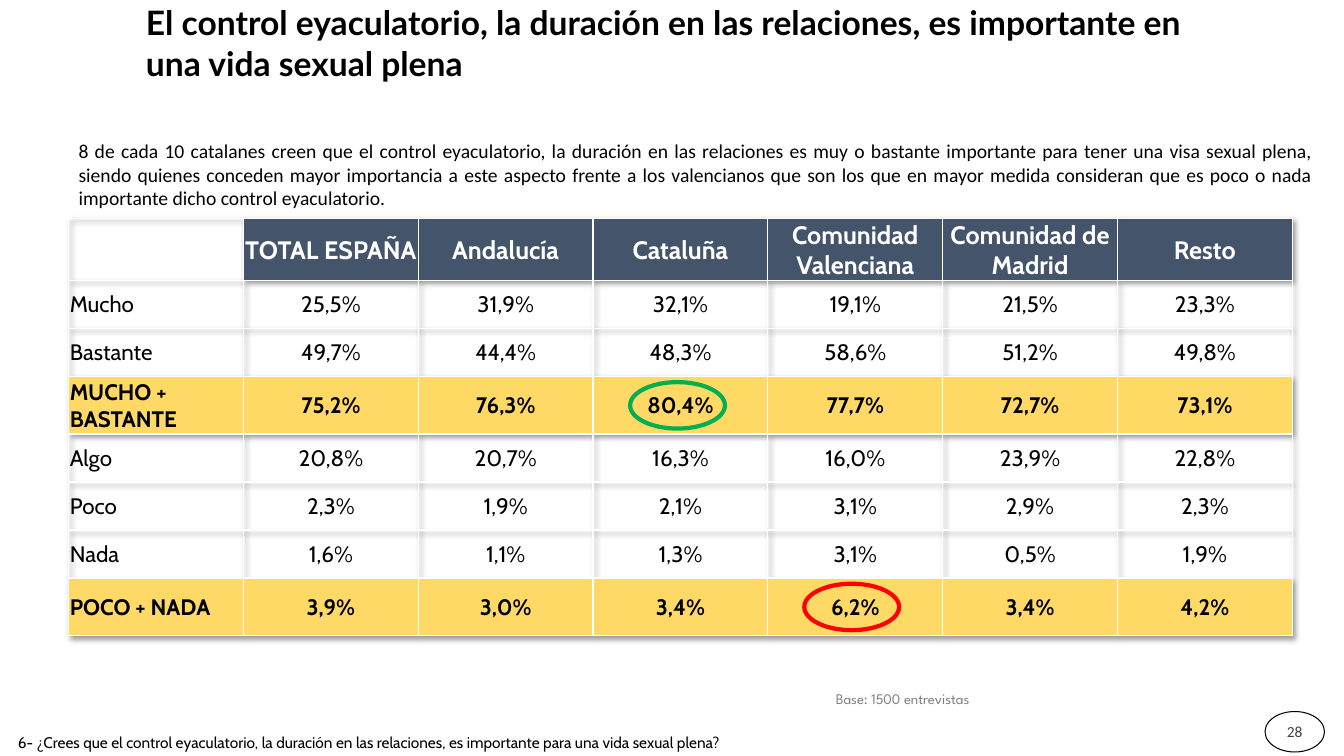
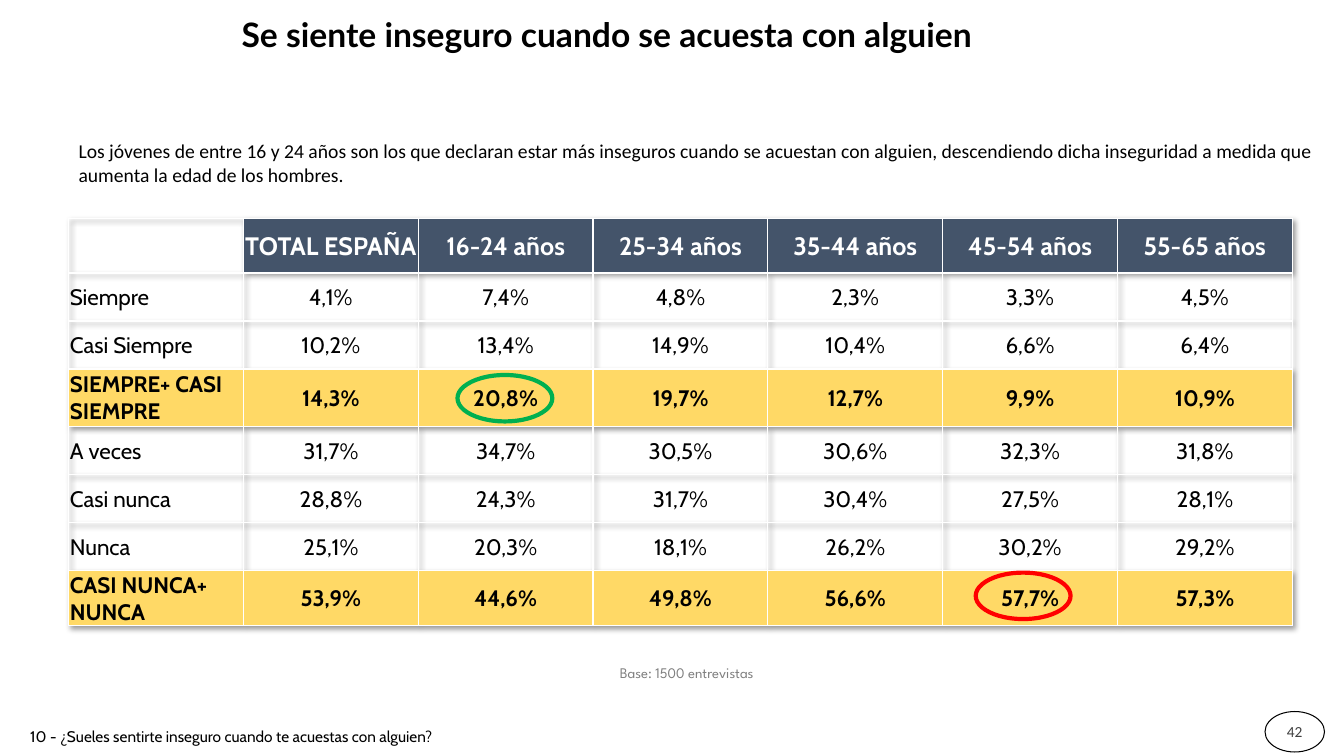
from pptx import Presentation, util as u
from pptx.dml.color import RGBColor
from pptx.enum import shapes, text
from pptx.oxml import parse_xml
from pptx.oxml.ns import nsdecls, qn
from lxml import etree

COLORS = {"black": "000000", "white": "FFFFFF", "navy": "44546A", "gold": "FFD966",
          "gray": "808080", "dark": "404040", "green": "00B050", "red": "FF0000"}
LEFT, CENTER, JUSTIFY = text.PP_ALIGN.LEFT, text.PP_ALIGN.CENTER, text.PP_ALIGN.JUSTIFY
STYLES = {
    "title": ("Lato", 24, "black", True),
    "lead": ("Calibri", 14, "black", False),
    "base": ("League Spartan", 10.5, "gray", False),
    "question": ("Cabin", 11, "black", False),
    "number": ("Calibri", 11, "dark", False),
    "header": ("Cabin", 18, "white", True),
    "body": ("Cabin", 16, "black", False),
    "subtotal": ("Cabin", 16, "black", True),
}
SUBTOTAL_ROWS = (3, 7)
COLUMN_WIDTH = 4.405
TABLE_SHADOW = (
    f'<a:effectLst {nsdecls("a")}><a:outerShdw blurRad="50800" dist="38100" dir="2700000" '
    'algn="tl" rotWithShape="0"><a:prstClr val="black"><a:alpha val="40000"/></a:prstClr>'
    '</a:outerShdw></a:effectLst>')

SLIDES = [
    {
        "number": "28",
        "title": "El control eyaculatorio, la duración en las relaciones, es importante en una vida sexual plena",
        "title_at": (3.43, 0.03, 27.76, 2.08), "title_align": LEFT,
        "lead": "8 de cada 10 catalanes creen que el control eyaculatorio, la duración en las relaciones "
                "es muy o bastante importante para tener una visa sexual plena, siendo quienes conceden "
                "mayor importancia a este aspecto frente a los valencianos que son los que en mayor medida "
                "consideran que es poco o nada importante dicho control eyaculatorio.",
        "lead_height": 2.06,
        "base_at": (20.02, 17.27, 5.46, 0.71),
        "question": "6- ¿Crees que el control eyaculatorio, la duración en las relaciones, "
                    "es importante para una vida sexual plena?",
        "question_at": (0.2, 18.34, 22.99, 0.74),
        "last_row": 1.45,
        "rows": [
            ["", "TOTAL ESPAÑA", "Andalucía", "Cataluña", "Comunidad Valenciana", "Comunidad de Madrid", "Resto"],
            ["Mucho", "25,5%", "31,9%", "32,1%", "19,1%", "21,5%", "23,3%"],
            ["Bastante", "49,7%", "44,4%", "48,3%", "58,6%", "51,2%", "49,8%"],
            ["MUCHO + BASTANTE", "75,2%", "76,3%", "80,4%", "77,7%", "72,7%", "73,1%"],
            ["Algo", "20,8%", "20,7%", "16,3%", "16,0%", "23,9%", "22,8%"],
            ["Poco", "2,3%", "1,9%", "2,1%", "3,1%", "2,9%", "2,3%"],
            ["Nada", "1,6%", "1,1%", "1,3%", "3,1%", "0,5%", "1,9%"],
            ["POCO + NADA", "3,9%", "3,0%", "3,4%", "6,2%", "3,4%", "4,2%"],
        ],
        "rings": [("green", 15.88, 9.63), ("red", 20.27, 14.71)],
    },
    {
        "number": "42",
        "title": "Se siente inseguro cuando se acuesta con alguien",
        "title_at": (4.14, 0.08, 22.3, 1.55), "title_align": CENTER,
        "lead": "Los jóvenes de entre 16 y 24 años son los que declaran estar más inseguros cuando se "
                "acuestan con alguien, descendiendo dicha inseguridad a medida que aumenta la edad de los hombres.",
        "lead_height": 1.45,
        "base_at": (14.58, 16.61, 5.46, 0.71),
        "question": "10 - ¿Sueles sentirte inseguro cuando te acuestas con alguien?",
        "question_at": (0.51, 18.19, 18.59, 0.74),
        "last_row": 1.3,
        "rows": [
            ["", "TOTAL ESPAÑA", "16-24 años", "25-34 años", "35-44 años", "45-54 años", "55-65 años"],
            ["Siempre", "4,1%", "7,4%", "4,8%", "2,3%", "3,3%", "4,5%"],
            ["Casi Siempre", "10,2%", "13,4%", "14,9%", "10,4%", "6,6%", "6,4%"],
            ["SIEMPRE+ CASI SIEMPRE", "14,3%", "20,8%", "19,7%", "12,7%", "9,9%", "10,9%"],
            ["A veces", "31,7%", "34,7%", "30,5%", "30,6%", "32,3%", "31,8%"],
            ["Casi nunca", "28,8%", "24,3%", "31,7%", "30,4%", "27,5%", "28,1%"],
            ["Nunca", "25,1%", "20,3%", "18,1%", "26,2%", "30,2%", "29,2%"],
            ["CASI NUNCA+ NUNCA", "53,9%", "44,6%", "49,8%", "56,6%", "57,7%", "57,3%"],
        ],
        "rings": [("green", 11.53, 9.45), ("red", 24.59, 14.43)],
    },
]


def write(frame, words, style, align):
    name, size, color, bold = STYLES[style]
    para = frame.paragraphs[0]
    para.alignment = align
    span = para.add_run()
    span.text = words
    span.font.name = name
    span.font.size = u.Pt(size)
    span.font.bold = bold
    span.font.color.rgb = RGBColor.from_string(COLORS[color])


def add_ellipse(page, at, color, weight):
    ellipse = page.shapes.add_shape(shapes.MSO_SHAPE.OVAL, *map(u.Cm, at))
    ellipse.shadow.inherit = False
    ellipse.fill.background()
    ellipse.line.color.rgb = RGBColor.from_string(COLORS[color])
    ellipse.line.width = u.Pt(weight)
    return ellipse


deck = Presentation()
deck.slide_width, deck.slide_height = u.Cm(33.87), u.Cm(19.05)

for content in SLIDES:
    page = deck.slides.add_slide(deck.slide_layouts[6])

    badge = add_ellipse(page, (31.88, 17.93, 1.5, 1.02), "black", 0.75)
    badge.fill.solid()
    badge.fill.fore_color.rgb = RGBColor.from_string(COLORS["white"])
    tint = badge.fill._xPr.find(qn("a:solidFill"))[0]
    etree.SubElement(tint, qn("a:alpha"), val="70000")
    badge.text_frame.margin_left = badge.text_frame.margin_right = u.Cm(0.05)
    badge.text_frame.vertical_anchor = text.MSO_ANCHOR.MIDDLE
    write(badge.text_frame, content["number"], "number", CENTER)

    for style, words, at, align in (
        ("base", "Base: 1500 entrevistas", content["base_at"], CENTER),
        ("lead", content["lead"], (1.73, 3.38, 31.62, content["lead_height"]), JUSTIFY),
        ("title", content["title"], content["title_at"], content["title_align"]),
        ("question", content["question"], content["question_at"], LEFT),
    ):
        box = page.shapes.add_textbox(*map(u.Cm, at))
        frame = box.text_frame
        frame.word_wrap = True
        if style == "title":
            frame.vertical_anchor = text.MSO_ANCHOR.MIDDLE
        else:
            frame.auto_size = text.MSO_AUTO_SIZE.SHAPE_TO_FIT_TEXT
        write(frame, words, style, align)

    rows = content["rows"]
    heights = [1.37, 1.21, 1.21, 1.45, 1.21, 1.21, 1.21, content["last_row"]]
    table = page.shapes.add_table(
        len(rows), len(rows[0]), u.Cm(1.73), u.Cm(5.51),
        u.Cm(COLUMN_WIDTH * len(rows[0])), u.Cm(sum(heights))).table
    table.first_row = table.horz_banding = False
    table._tbl.tblPr.insert(0, parse_xml(TABLE_SHADOW))
    for column in table.columns:
        column.width = u.Cm(COLUMN_WIDTH)

    for row, (height, values) in enumerate(zip(heights, rows)):
        table.rows[row].height = u.Cm(height)
        if row == 0:
            style, fill = "header", "navy"
        elif row in SUBTOTAL_ROWS:
            style, fill = "subtotal", "gold"
        else:
            style, fill = "body", None
        for col, value in enumerate(values):
            cell = table.cell(row, col)
            cell.margin_left = cell.margin_right = cell.margin_top = u.Cm(0.03)
            cell.margin_bottom = 0
            cell.vertical_anchor = text.MSO_ANCHOR.MIDDLE
            for side in ("lnL", "lnR", "lnT", "lnB"):
                cell._tc.get_or_add_tcPr().append(parse_xml(
                    f'<a:{side} {nsdecls("a")} w="12700"><a:solidFill>'
                    f'<a:srgbClr val="{COLORS["white"]}"/></a:solidFill></a:{side}>'))
            if fill and value:
                cell.fill.solid()
                cell.fill.fore_color.rgb = RGBColor.from_string(COLORS[fill])
            else:
                cell.fill.background()
            if value:
                write(cell.text_frame, value, style, CENTER if col else LEFT)

    for color, left, top in content["rings"]:
        add_ellipse(page, (left, top, 2.39, 1.17), color, 3)

deck.save("out.pptx")
